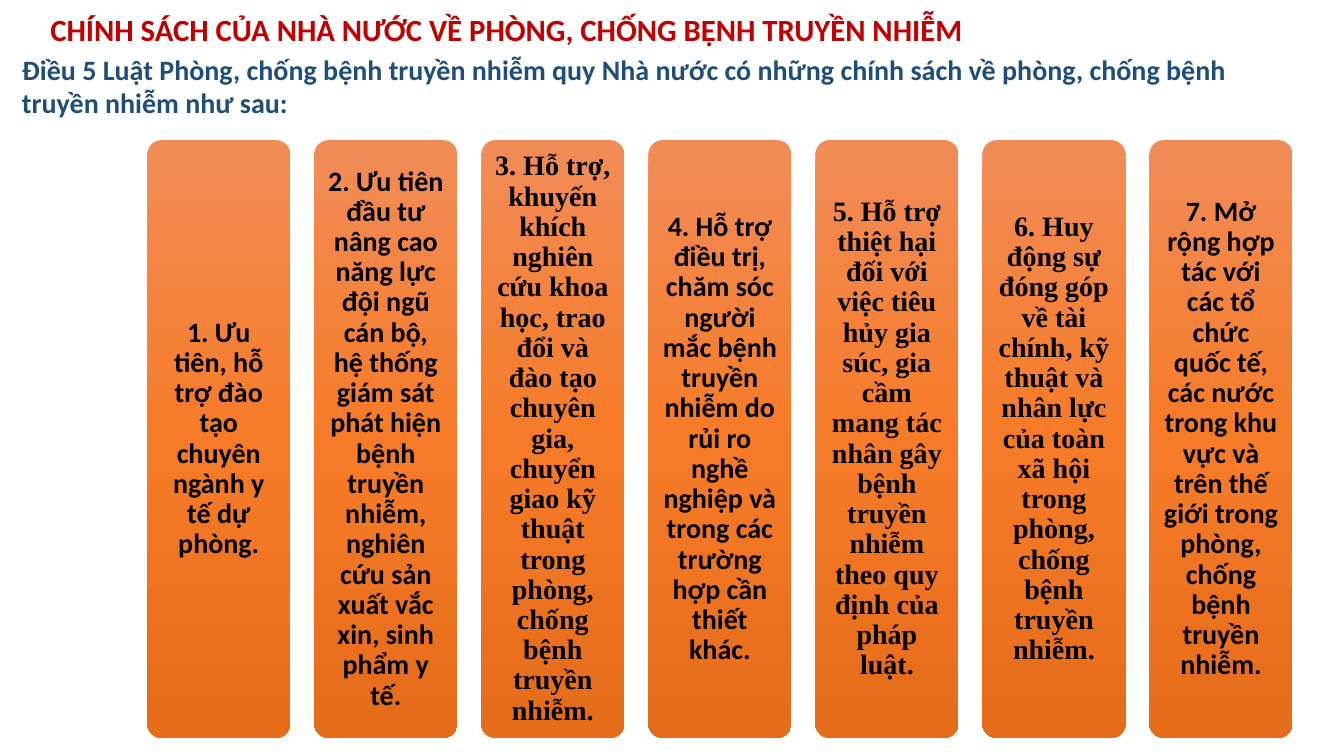
import copy

import pptx
import pptx.dml.color
import pptx.enum.shapes
import pptx.enum.text
import pptx.oxml.ns
import pptx.util

Inches = pptx.util.Inches
RGBColor = pptx.dml.color.RGBColor
RED = RGBColor(0xC0, 0x00, 0x00)
NAVY = RGBColor(0x1F, 0x4E, 0x79)
BLACK = RGBColor(0x00, 0x00, 0x00)
CARD_STOPS = (
    (0, RGBColor(0xF1, 0x8C, 0x57)),
    (0.5, RGBColor(0xF6, 0x7B, 0x28)),
    (1, RGBColor(0xE5, 0x6C, 0x19)),
)

SANS = "Calibri"
SERIF = "Times New Roman"
TITLE = "CHÍNH SÁCH CỦA NHÀ NƯỚC VỀ PHÒNG, CHỐNG BỆNH TRUYỀN NHIỄM"
LEAD = (
    "Điều 5 Luật Phòng, chống bệnh truyền nhiễm quy Nhà nước có những "
    "chính sách về phòng, chống bệnh truyền nhiễm như sau:"
)
POLICIES = (
    ("1. Ưu tiên, hỗ trợ đào tạo chuyên ngành y tế dự phòng.", SANS),
    ("2. Ưu tiên đầu tư nâng cao năng lực đội ngũ cán bộ, hệ thống giám sát "
     "phát hiện bệnh truyền nhiễm, nghiên cứu sản xuất vắc xin, sinh phẩm y tế.", SANS),
    ("3. Hỗ trợ, khuyến khích nghiên cứu khoa học, trao đổi và đào tạo chuyên gia, "
     "chuyển giao kỹ thuật trong phòng, chống bệnh truyền nhiễm.", SERIF),
    ("4. Hỗ trợ điều trị, chăm sóc người mắc bệnh truyền nhiễm do rủi ro nghề nghiệp "
     "và trong các trường hợp cần thiết khác.", SANS),
    ("5. Hỗ trợ thiệt hại đối với việc tiêu hủy gia súc, gia cầm mang tác nhân gây "
     "bệnh truyền nhiễm theo quy định của pháp luật.", SERIF),
    ("6. Huy động sự đóng góp về tài chính, kỹ thuật và nhân lực của toàn xã hội "
     "trong phòng, chống bệnh truyền nhiễm.", SERIF),
    ("7. Mở rộng hợp tác với các tổ chức quốc tế, các nước trong khu vực và trên "
     "thế giới trong phòng, chống bệnh truyền nhiễm.", SANS),
)


def write(shape, text, size, color, font_name=SANS):
    frame = shape.text_frame
    frame.word_wrap = True
    para = frame.paragraphs[0]
    para.text = text
    para.font.name = font_name
    para.font.size = pptx.util.Pt(size)
    para.font.bold = True
    para.font.color.rgb = color
    return frame, para


def add_heading(page, box, text, size, color):
    heading = page.shapes.add_textbox(*map(Inches, box))
    frame, para = write(heading, text, size, color)
    frame.auto_size = pptx.enum.text.MSO_AUTO_SIZE.SHAPE_TO_FIT_TEXT


def paint_gradient(shape):
    shape.fill.gradient()
    shape.fill.gradient_angle = 270
    stop_list = shape.element.spPr.find(".//" + pptx.oxml.ns.qn("a:gsLst"))
    stop_list.append(copy.deepcopy(stop_list[0]))
    for stop, (position, color) in zip(shape.fill.gradient_stops, CARD_STOPS):
        stop.position = position
        stop.color.rgb = color


def add_card(page, box, text, font_name):
    card = page.shapes.add_shape(
        pptx.enum.shapes.MSO_SHAPE.ROUNDED_RECTANGLE, *map(Inches, box))
    card.adjustments[0] = 0.1
    card.shadow.inherit = False
    card.line.fill.background()
    paint_gradient(card)
    frame, para = write(card, text, 20, BLACK, font_name)
    frame.vertical_anchor = pptx.enum.text.MSO_ANCHOR.MIDDLE
    frame.margin_left = frame.margin_right = Inches(0.08)
    frame.margin_top = frame.margin_bottom = Inches(0.08)
    para.alignment = pptx.enum.text.PP_ALIGN.CENTER
    para.line_spacing = 0.9


def add_policy_row(page, box):
    left, top, width, height = box
    gap_share = 1 / 6
    count = len(POLICIES)
    card_width = width / (count + (count - 1) * gap_share)
    step = card_width * (1 + gap_share)
    for column, (text, font_name) in enumerate(POLICIES):
        add_card(page, (left + column * step, top, card_width, height), text, font_name)


def main():
    deck = pptx.Presentation()
    deck.slide_width = Inches(13.33)
    deck.slide_height = Inches(7.5)
    page = deck.slides.add_slide(deck.slide_layouts[6])
    add_heading(page, (0.4, 0.06, 11.55, 0.47), TITLE, 22, RED)
    add_heading(page, (0.12, 0.47, 12.94, 0.77), LEAD, 20, NAVY)
    add_policy_row(page, (1.46, 1.39, 11.36, 5.93))
    deck.save("out.pptx")


if __name__ == "__main__":
    main()
